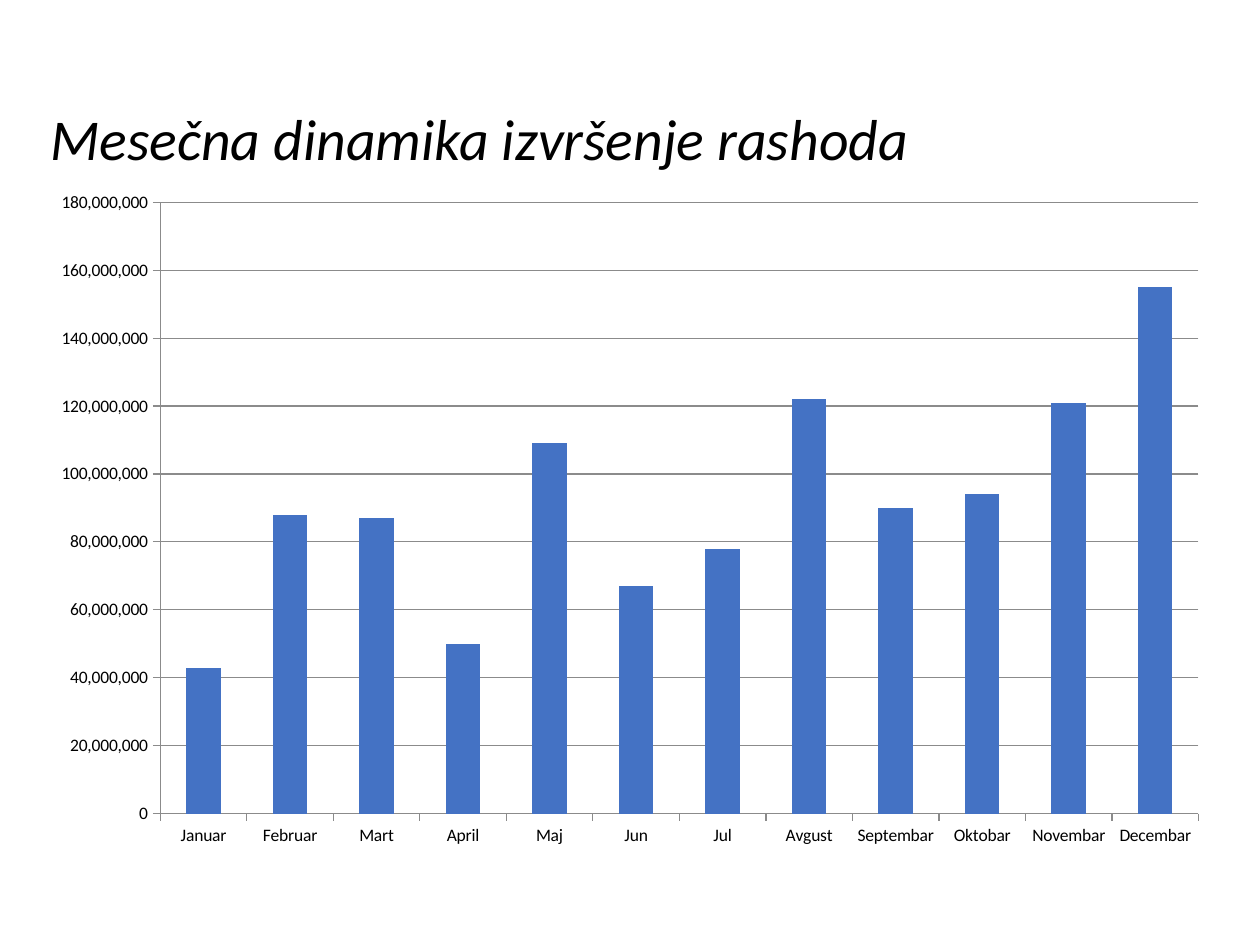
from pptx import Presentation
from pptx.chart.data import CategoryChartData
from pptx.dml.color import RGBColor
from pptx.enum.chart import XL_CHART_TYPE as ChartType, XL_TICK_MARK as Tick
from pptx.enum.text import MSO_ANCHOR as Anchor, MSO_AUTO_SIZE as AutoSize, PP_ALIGN as Align
from pptx.util import Pt

# Content
TITLE = "Mesečna dinamika izvršenje rashoda"
EXPENSES = {  # millions
    "Januar": 43, "Februar": 88, "Mart": 87, "April": 50,
    "Maj": 109, "Jun": 67, "Jul": 78, "Avgust": 122,
    "Septembar": 90, "Oktobar": 94, "Novembar": 121, "Decembar": 155,
}
MILLION = 1_000_000

# Layout
WIDTH, HEIGHT = 720, 540
MARGIN = 21.6
TITLE_TOP, TITLE_H, CHART_H = 18, 84.24, 388.8
BLACK, BLUE, GRAY = "000000", "4472C4", "8B8B8B"


def color(target, value):
    target.rgb = RGBColor.from_string(value)


def set_attrs(target, values):
    for name, value in values.items():
        setattr(target, name, value)


def set_font(font, size, italic=False):
    set_attrs(font, {"name": "Calibri", "size": Pt(size), "bold": False, "italic": italic})
    color(font.color, BLACK)


def set_line(line):
    line.width = Pt(0.75)
    color(line.color, GRAY)


prs = Presentation()
prs.slide_width, prs.slide_height = Pt(WIDTH), Pt(HEIGHT)
s = prs.slides.add_slide(prs.slide_layouts[5])
content_w = WIDTH - 2 * MARGIN

# Title
title = s.shapes.title
set_attrs(title, {"left": Pt(MARGIN), "top": Pt(TITLE_TOP),
                  "width": Pt(content_w), "height": Pt(TITLE_H)})
tf = title.text_frame
set_attrs(tf, {"text": TITLE, "vertical_anchor": Anchor.BOTTOM,
               "word_wrap": True, "auto_size": AutoSize.NONE})
p = tf.paragraphs[0]
set_attrs(p, {"alignment": Align.LEFT, "line_spacing": 0.9})
set_font(p.runs[0].font, 33, italic=True)

# Monthly expenses chart
data = CategoryChartData(number_format="#,##0")
data.categories = list(EXPENSES)
data.add_series("Series 1", [v * MILLION for v in EXPENSES.values()])
chart = s.shapes.add_chart(
    ChartType.COLUMN_CLUSTERED, Pt(MARGIN), Pt(TITLE_TOP + TITLE_H),
    Pt(content_w), Pt(CHART_H), data).chart
set_attrs(chart, {"has_legend": False, "has_title": False})
set_font(chart.font, 10)

plot = chart.plots[0]
set_attrs(plot, {"gap_width": 150, "vary_by_categories": False})
fill = plot.series[0].format.fill
fill.solid()
color(fill.fore_color, BLUE)

# Axes
for axis in (chart.category_axis, chart.value_axis):
    set_attrs(axis, {"major_tick_mark": Tick.OUTSIDE, "minor_tick_mark": Tick.NONE})
    set_line(axis.format.line)
val_axis = chart.value_axis
set_attrs(val_axis, {"minimum_scale": 0, "maximum_scale": 180 * MILLION,
                     "major_unit": 20 * MILLION, "has_major_gridlines": True})
set_attrs(val_axis.tick_labels, {"number_format": "#,##0", "number_format_is_linked": False})
set_line(val_axis.major_gridlines.format.line)

prs.save("out.pptx")
